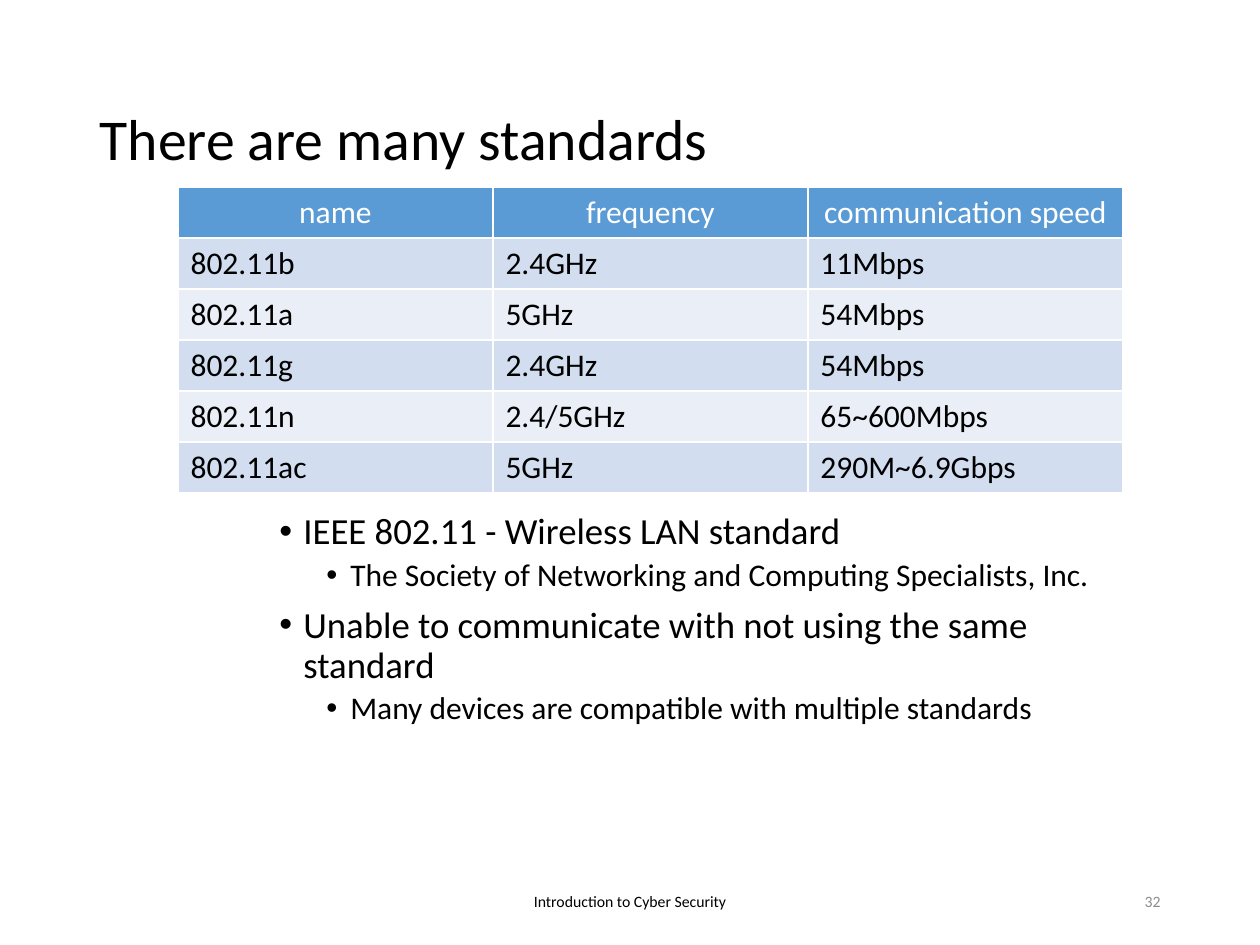
from lxml import etree
from pptx import Presentation
from pptx import util as u
from pptx.dml.color import RGBColor
from pptx.enum import text
from pptx.oxml.ns import qn

PX = u.Inches(1) // 126
FONT = "Calibri"
COLORS = {"ink": "000000", "white": "FFFFFF", "muted": "8C8C8C",
          "header": "5B9BD5", "dark_band": "D2DEEF", "light_band": "EAEFF7"}


def style(para, size, color="ink", align=text.PP_ALIGN.LEFT):
    para.alignment = align
    para.font.name = FONT
    para.font.size = u.Pt(size)
    para.font.bold = False
    para.font.color.rgb = RGBColor.from_string(COLORS[color])


def add_text_box(page, left, top, width, height, anchor):
    box = page.shapes.add_textbox(left * PX, top * PX, width * PX, height * PX)
    box.text_frame.word_wrap = True
    box.text_frame.vertical_anchor = anchor
    return box.text_frame


deck = Presentation()
deck.slide_width, deck.slide_height = u.Inches(10), u.Inches(7.5)
page = deck.slides.add_slide(deck.slide_layouts[5])

# Title
title = page.shapes.title
title.left, title.top, title.width, title.height = (n * PX for n in (87, 50, 1086, 183))
title.text_frame.text = "There are many standards"
title.text_frame.vertical_anchor = text.MSO_ANCHOR.MIDDLE
style(title.text_frame.paragraphs[0], 33)
title.text_frame.paragraphs[0].line_spacing = 0.9

# Bullets: level, text
bullets = [
    (0, "IEEE 802.11 - Wireless LAN standard"),
    (1, "The Society of Networking and Computing Specialists, Inc."),
    (0, "Unable to communicate with not using the same standard"),
    (1, "Many devices are compatible with multiple standards"),
]
frame = add_text_box(page, 267, 507, 908, 309, text.MSO_ANCHOR.TOP)
for index, (level, words) in enumerate(bullets):
    para = frame.add_paragraph() if index else frame.paragraphs[0]
    para.text = words
    para.level = level
    para.line_spacing = 0.9
    para.space_before = u.Pt((7.5, 3.8)[level])
    style(para, (21, 18)[level])
    props = para._p.get_or_add_pPr()
    props.set("marL", str((24 + 47 * level) * PX))
    props.set("indent", str(-24 * PX))
    etree.SubElement(props, qn("a:buFont"), typeface="Arial")
    etree.SubElement(props, qn("a:buChar"), char="•")
    props.append(props.find(qn("a:defRPr")))  # defRPr must follow the bullet

# Footer and slide number
for left, width, words, color, align in [
    (417, 426, "Introduction to Cyber Security", "ink", text.PP_ALIGN.CENTER),
    (890, 283, "32", "muted", text.PP_ALIGN.RIGHT),
]:
    frame = add_text_box(page, left, 876, width, 50, text.MSO_ANCHOR.MIDDLE)
    frame.text = words
    style(frame.paragraphs[0], 9, color, align)

# Table of standards
rows = [
    ("name", "frequency", "communication speed"),
    ("802.11b", "2.4GHz", "11Mbps"),
    ("802.11a", "5GHz", "54Mbps"),
    ("802.11g", "2.4GHz", "54Mbps"),
    ("802.11n", "2.4/5GHz", "65~600Mbps"),
    ("802.11ac", "5GHz", "290M~6.9Gbps"),
]
table = page.shapes.add_table(len(rows), 3, 178 * PX, 187 * PX,
                              945 * PX, 51 * len(rows) * PX).table
for row_index, row in enumerate(rows):
    if row_index == 0:
        fill, color, align = "header", "white", text.PP_ALIGN.CENTER
    else:
        fill = "dark_band" if row_index % 2 else "light_band"
        color, align = "ink", text.PP_ALIGN.LEFT
    for column, words in enumerate(row):
        cell = table.cell(row_index, column)
        cell.text = words
        cell.fill.solid()
        cell.fill.fore_color.rgb = RGBColor.from_string(COLORS[fill])
        style(cell.text_frame.paragraphs[0], 18, color, align)

deck.save("out.pptx")
